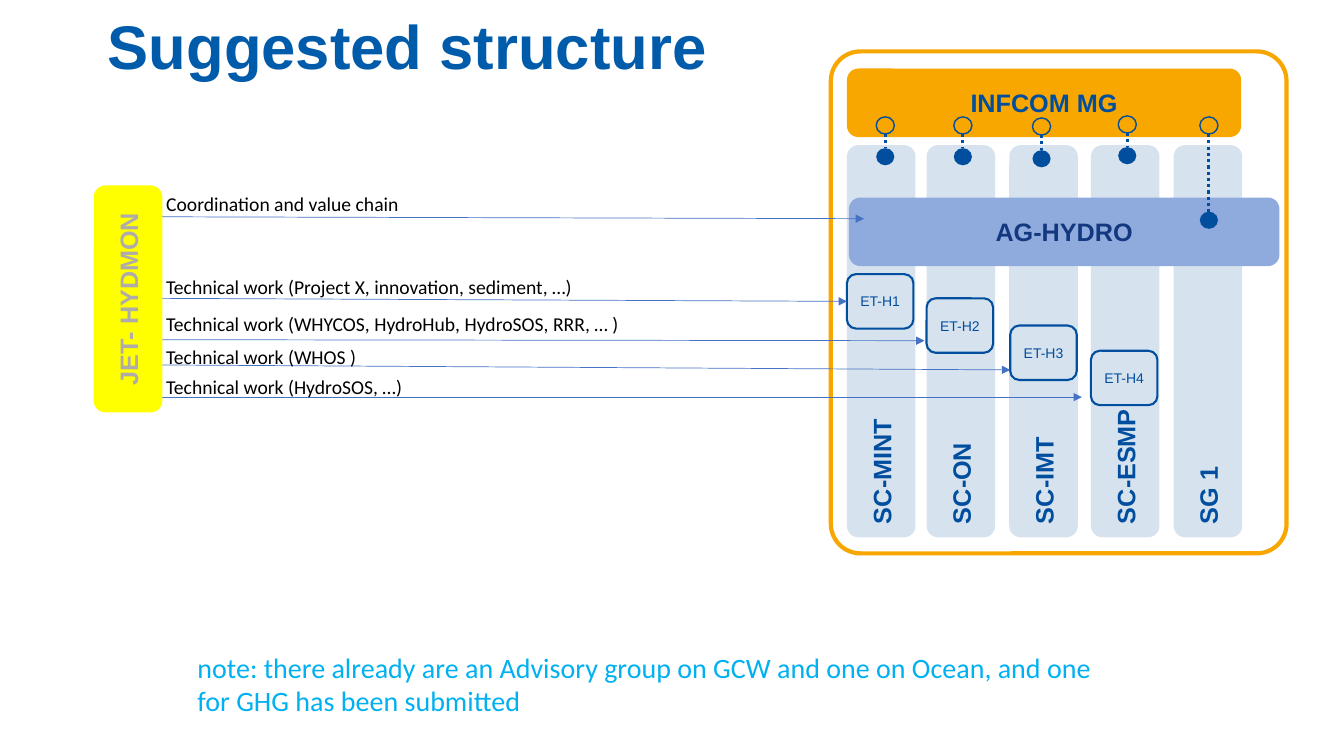
from pptx import Presentation
from pptx.dml.color import RGBColor
from pptx.enum import dml, shapes, text
from pptx.oxml import parse_xml
from pptx.oxml.ns import nsdecls
from pptx.util import Inches, Pt

BLUE = RGBColor(0x01, 0x4E, 0x9E)
TITLE_BLUE = RGBColor(0x00, 0x5B, 0xAA)
NAVY = RGBColor(0x14, 0x38, 0x7F)
PERIWINKLE = RGBColor(0x8F, 0xAA, 0xDC)
PALE = RGBColor(0xD6, 0xE3, 0xEF)
ORANGE = RGBColor(0xF8, 0xA7, 0x00)
YELLOW = RGBColor(0xFF, 0xFF, 0x00)
GREY = RGBColor(0xAF, 0xAB, 0xAB)
ARROW_BLUE = RGBColor(0x44, 0x72, 0xC4)
NOTE_BLUE = RGBColor(0x00, 0xB0, 0xF0)
BLACK = RGBColor(0, 0, 0)

TITLE = "Suggested structure"
NOTE = ("note: there already are an Advisory group on GCW and one on Ocean, "
        "and one for GHG has been submitted")
COMMITTEES = [("SC-MINT", 8.4), ("SC-ON", 9.19), ("SC-IMT", 10.01),
              ("SC-ESMP", 10.82), ("SG 1", 11.64)]
TEAMS = [("ET-H1", 8.4, 2.72), ("ET-H2", 9.19, 2.96),
         ("ET-H3", 10.02, 3.23), ("ET-H4", 10.82, 3.48)]
LINKS = [(8.78, 1.16, 1.47), (9.55, 1.16, 1.47), (10.33, 1.17, 1.49),
         (11.18, 1.15, 1.46), (11.99, 1.16, 2.1)]
TASKS = [
    ("Coordination and value chain", 1.86, 2.53, (1.41, 2.15, 8.57, 2.17)),
    ("Technical work (Project X, innovation, sediment, …)", 2.68, 4.27,
     (1.6, 2.96, 8.4, 2.99)),
    ("Technical work (WHYCOS, HydroHub, HydroSOS, RRR, … )", 3.05, 4.87,
     (1.41, 3.37, 9.17, 3.38)),
    ("Technical work (WHOS )", 3.37, 2.1, (1.47, 3.62, 10.02, 3.67)),
    ("Technical work (HydroSOS, …)", 3.67, 2.57, (1.47, 3.94, 10.73, 3.94)),
]
BAR = 0.68
COLUMN_TOP, COLUMN_LENGTH = 1.44, 3.89
DOT_W, DOT_H = 0.18, 0.17
LEFT, CENTER = text.PP_ALIGN.LEFT, text.PP_ALIGN.CENTER


def write(shape, words, size, color, font="Arial", bold=False, align=LEFT):
    """Put one formatted paragraph into a shape."""
    shape.text_frame.text = words
    paragraph = shape.text_frame.paragraphs[0]
    paragraph.alignment = align
    style = paragraph.runs[0].font
    style.name, style.size, style.bold = font, Pt(size), bold
    style.color.rgb = color
    return paragraph


def add_box(slide, box, fill=None, line=None, weight=1.0,
            kind=shapes.MSO_SHAPE.ROUNDED_RECTANGLE):
    """Add a preset shape with an optional fill and outline."""
    shape = slide.shapes.add_shape(kind, *map(Inches, box))
    shape.shadow.inherit = False
    if fill is None:
        shape.fill.background()
    else:
        shape.fill.solid()
        shape.fill.fore_color.rgb = fill
    if line is None:
        shape.line.fill.background()
    else:
        shape.line.color.rgb = line
        shape.line.width = Pt(weight)
    shape.text_frame.vertical_anchor = text.MSO_ANCHOR.MIDDLE
    return shape


def add_upright(slide, left, top, length, fill, words, color, align):
    """Add a bar turned to read upwards, placed by its visible corner."""
    shift = (length - BAR) / 2
    bar = add_box(slide, (left - shift, top + shift, length, BAR), fill)
    bar.rotation = 270
    write(bar, words, 18, color, bold=True, align=align)


def add_line(slide, ends, color, weight):
    """Add a straight connector without a shadow."""
    line = slide.shapes.add_connector(shapes.MSO_CONNECTOR.STRAIGHT,
                                      *map(Inches, ends))
    line.line.color.rgb = color
    line.line.width = Pt(weight)
    line._element.spPr.append(parse_xml(f"<a:effectLst {nsdecls('a')}/>"))
    return line


def add_label(slide, box, words, size, color, wrap):
    """Add a Calibri text box."""
    label = slide.shapes.add_textbox(*map(Inches, box))
    label.text_frame.word_wrap = wrap
    write(label, words, size, color, font="Calibri")


def add_title(slide):
    """Place and format the title placeholder."""
    title = slide.shapes.title
    title.left, title.top, title.width, title.height = map(
        Inches, (1.07, 0.34, 11.69, 0.5))
    frame = title.text_frame
    frame.margin_left = frame.margin_right = 0
    frame.margin_top = frame.margin_bottom = 0
    frame.vertical_anchor = text.MSO_ANCHOR.TOP
    frame.auto_size = text.MSO_AUTO_SIZE.NONE
    write(title, TITLE, 44, TITLE_BLUE, bold=True).line_spacing = Pt(33.6)


def add_structure(slide):
    """Draw the frame, bars, committee columns, teams and links."""
    frame = add_box(slide, (8.24, 0.51, 4.52, 4.98), line=ORANGE, weight=3)
    frame.adjustments[0] = 0.065
    management = add_box(slide, (8.4, 0.68, 3.91, BAR), ORANGE)
    write(management, "INFCOM MG", 18, BLUE, bold=True, align=CENTER)
    for name, left in COMMITTEES:
        add_upright(slide, left, COLUMN_TOP, COLUMN_LENGTH, PALE, name, BLUE, LEFT)
    advisory = add_box(slide, (8.42, 1.96, 4.27, BAR), PERIWINKLE)
    write(advisory, "AG-HYDRO", 18, NAVY, bold=True, align=CENTER)
    for name, left, top in TEAMS:
        team = add_box(slide, (left, top, 0.66, 0.54), line=BLUE, weight=1.5)
        write(team, name, 10, BLUE, align=CENTER)
    oval = shapes.MSO_SHAPE.OVAL
    for x, ring_top, dot_top in LINKS:
        left = x - DOT_W / 2
        add_box(slide, (left, dot_top, DOT_W, DOT_H), BLUE, kind=oval)
        add_box(slide, (left, ring_top, DOT_W, DOT_H), line=BLUE, kind=oval)
        link = add_line(slide, (x, ring_top + DOT_H, x, dot_top), BLUE, 2.25)
        link.line.dash_style = dml.MSO_LINE.ROUND_DOT


def add_tasks(slide):
    """Draw the team bar with its arrows and their labels."""
    for words, top, width, ends in TASKS:
        arrow = add_line(slide, ends, ARROW_BLUE, 0.5)
        arrow.line._get_or_add_ln().append(
            parse_xml(f"<a:tailEnd {nsdecls('a')} type='triangle'/>"))
        add_label(slide, (1.55, top, width, 0.34), words, 14, BLACK, False)
    add_upright(slide, 0.93, 1.84, 2.25, YELLOW, "JET- HYDMON", GREY, CENTER)


def main():
    """Build the slide and save it."""
    deck = Presentation()
    deck.slide_width, deck.slide_height = Inches(13.33), Inches(7.5)
    slide = deck.slides.add_slide(deck.slide_layouts[5])
    add_title(slide)
    add_structure(slide)
    add_tasks(slide)
    add_label(slide, (1.86, 6.4, 9.32, 0.77), NOTE, 20, NOTE_BLUE, True)
    deck.save("out.pptx")


if __name__ == "__main__":
    main()
